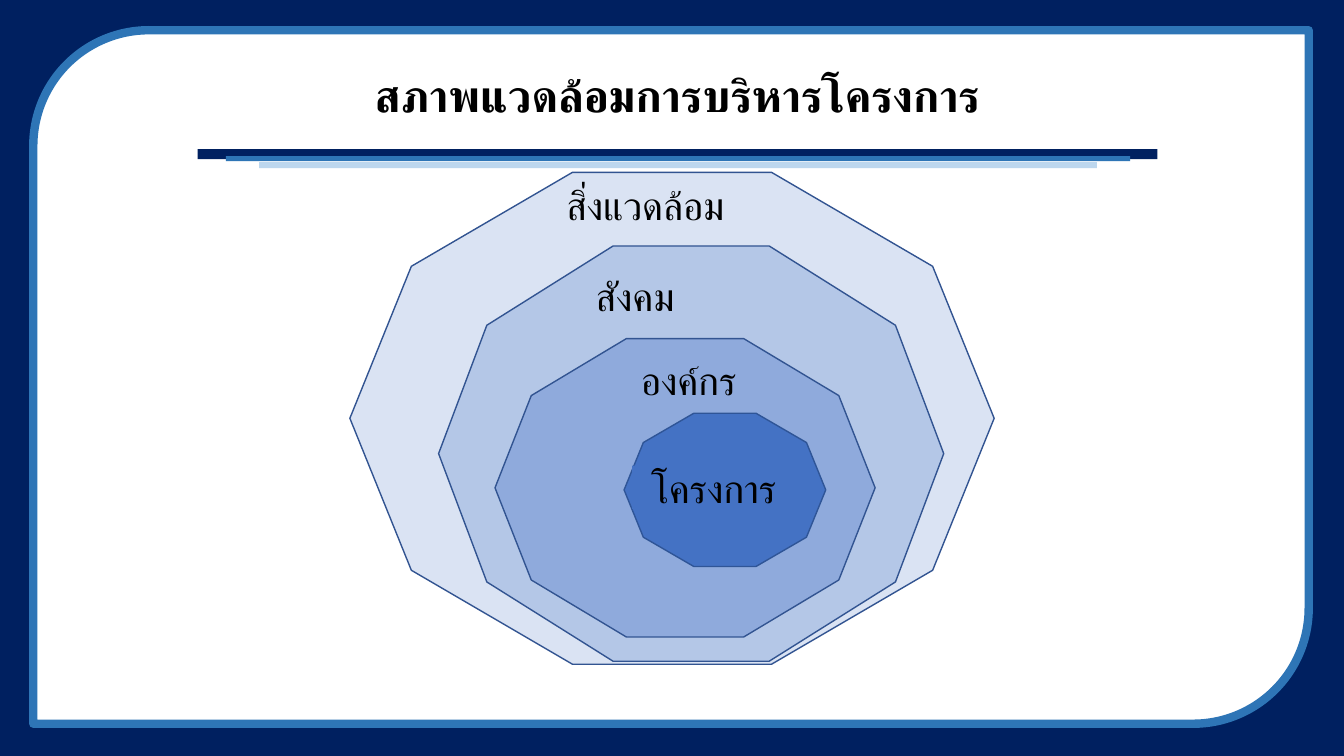
from dataclasses import dataclass
from typing import Optional

from lxml import etree
from pptx import Presentation
from pptx import util as u
from pptx.dml.color import RGBColor
from pptx.enum import shapes, text
from pptx.oxml import ns

COLORS = {
    "navy": "002060", "blue": "2E75B6", "sky": "BDD7EE", "white": "FFFFFF",
    "black": "000000", "environment": "DAE3F3", "society": "B4C7E7",
    "organization": "8FAADC", "project": "4472C4",
    "outline": "325491", "project_outline": "2F5597",
}
SHAPE = shapes.MSO_SHAPE
CENTER = text.PP_ALIGN.CENTER
LEFT = text.PP_ALIGN.LEFT
MIDDLE = text.MSO_ANCHOR.MIDDLE
TOP = text.MSO_ANCHOR.TOP


@dataclass
class Box:
    left: float
    top: float
    width: float
    height: float

    def lengths(self) -> list:
        return [u.Inches(n) for n in (self.left, self.top, self.width, self.height)]


@dataclass
class Panel:
    box: Box
    fill: str
    kind: int = SHAPE.RECTANGLE
    line: Optional[str] = None
    line_width: float = 1


@dataclass
class Label:
    box: Box
    wording: str
    align: int = LEFT
    anchor: int = TOP
    font: str = "Calibri"
    size: int = 28
    bold: bool = False
    spacing: float = 1.0
    fill: Optional[str] = None


# Frame and title rules
FRAME = [
    Panel(Box(0, 0, 13.33, 7.5), "navy"),
    Panel(Box(0.33, 0.3, 12.65, 6.88), "white", SHAPE.ROUND_2_DIAG_RECTANGLE, "blue", 6),
    Panel(Box(1.96, 1.48, 9.52, 0.1), "navy"),
    Panel(Box(2.24, 1.55, 8.97, 0.05), "blue"),
    Panel(Box(2.57, 1.61, 8.31, 0.06), "sky"),
]

# Nested layers, outermost first
LAYERS = [
    Panel(Box(3.47, 1.71, 6.39, 4.88), "environment", SHAPE.DECAGON, "outline"),
    Panel(Box(4.35, 2.44, 5.01, 4.12), "society", SHAPE.DECAGON, "outline"),
    Panel(Box(4.91, 3.36, 3.77, 2.96), "organization", SHAPE.DECAGON, "outline"),
    Panel(Box(6.19, 4.1, 2, 1.52), "project", SHAPE.DECAGON, "project_outline"),
]

LABELS = [
    Label(Box(1.96, 0.49, 9.52, 0.97), "สภาพแวดล้อมการบริหารโครงการ",
          CENTER, MIDDLE, "Arial", 32, True, 0.9),
    Label(Box(6.27, 4.62, 1.62, 0.43), "โครงการ", CENTER, MIDDLE, fill="project"),
    Label(Box(5.79, 3.49, 2.08, 0.57), "องค์กร", CENTER),
    Label(Box(5.81, 2.65, 2.43, 0.57), "สังคม"),
    Label(Box(5.52, 1.75, 2.43, 0.57), "สิ่งแวดล้อม"),
]


def color(name: str) -> RGBColor:
    return RGBColor.from_string(COLORS[name])


def apply_format(target, values: dict) -> None:
    for name, value in values.items():
        setattr(target, name, value)


def paint(shape, fill: str) -> None:
    shape.fill.solid()
    shape.fill.fore_color.rgb = color(fill)


def draw_panel(slide, panel: Panel) -> None:
    shape = slide.shapes.add_shape(panel.kind, *panel.box.lengths())
    shape.shadow.inherit = False
    paint(shape, panel.fill)
    if panel.line:
        shape.line.color.rgb = color(panel.line)
        shape.line.width = u.Pt(panel.line_width)
    else:
        shape.line.fill.background()


def draw_label(slide, label: Label) -> None:
    shape = slide.shapes.add_textbox(*label.box.lengths())
    if label.fill:
        paint(shape, label.fill)
    frame = shape.text_frame
    apply_format(frame, {"word_wrap": True, "vertical_anchor": label.anchor})
    paragraph = frame.paragraphs[0]
    apply_format(paragraph, {"alignment": label.align, "line_spacing": label.spacing})
    run = paragraph.add_run()
    run.text = label.wording
    apply_format(run.font, {"name": label.font, "size": u.Pt(label.size), "bold": label.bold})
    run.font.color.rgb = color("black")
    # Thai uses the complex-script typeface
    properties = run.font._element
    etree.SubElement(properties, ns.qn("a:cs"), typeface=label.font)


def main() -> None:
    presentation = Presentation()
    apply_format(presentation, {"slide_width": u.Inches(13.33), "slide_height": u.Inches(7.5)})
    slide = presentation.slides.add_slide(presentation.slide_layouts[6])
    for panel in FRAME + LAYERS:
        draw_panel(slide, panel)
    for label in LABELS:
        draw_label(slide, label)
    presentation.save("out.pptx")


if __name__ == "__main__":
    main()
